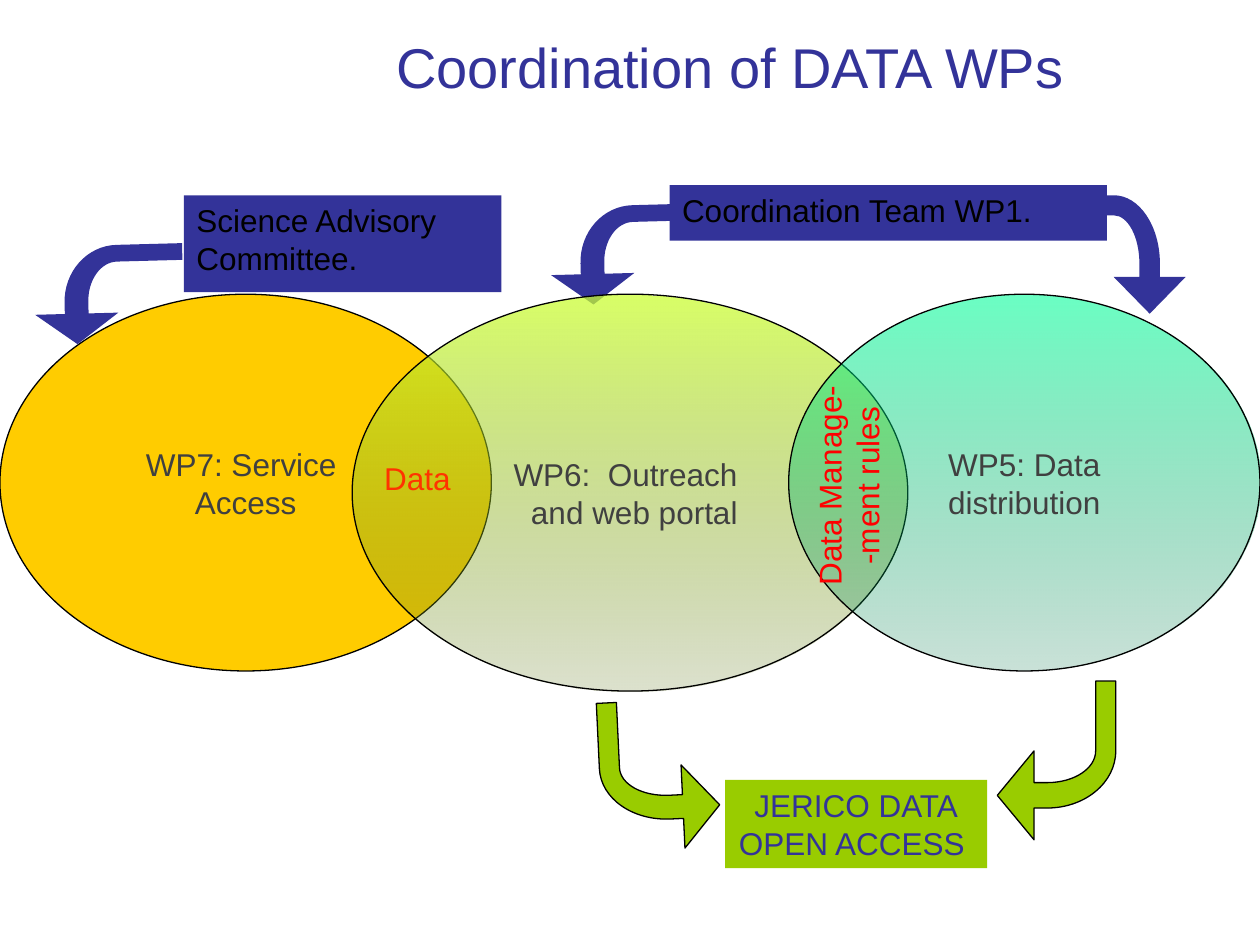
"""Build the slide on the coordination of the data work packages."""
import pptx
import pptx.dml.color
import pptx.enum.shapes
import pptx.enum.text
import pptx.oxml
import pptx.oxml.ns
import pptx.util

RGB = pptx.dml.color.RGBColor
SHAPE = pptx.enum.shapes.MSO_SHAPE
ALIGN = pptx.enum.text.PP_ALIGN
ANCHOR = pptx.enum.text.MSO_ANCHOR
AUTO = pptx.enum.text.MSO_AUTO_SIZE

NAVY = RGB(0x33, 0x33, 0x99)
GREEN = RGB(0x99, 0xCC, 0x00)
AMBER = RGB(0xFF, 0xCC, 0x00)
LIME = RGB(0xCC, 0xFF, 0x33)
OLIVE = RGB(0x5E, 0x76, 0x18)
MINT = RGB(0x00, 0xFF, 0x99)
TEAL = RGB(0x00, 0x76, 0x47)
ORANGE = RGB(0xFF, 0x33, 0x00)
RED = RGB(0xFF, 0x00, 0x00)
GREY = RGB(0x40, 0x40, 0x40)
BLACK = RGB(0x00, 0x00, 0x00)

COLS, ROWS = 100, 75
CELL = pptx.util.Inches(0.1)

ARROW = [(1, 0.28), (0.69, 0), (0.69, 0.2), (0.58, 0.2),
         (0.26, 0.2), (0, 0.36), (0, 0.56),
         (0, 1), (0.17, 1), (0.17, 0.56),
         (0.17, 0.45), (0.35, 0.36), (0.58, 0.36),
         (0.69, 0.36), (0.69, 0.56)]
ARROW_BENDS = (3, 9)


def grid(*cells):
    """Turn grid columns and rows into lengths."""
    return [pptx.util.Emu(round(c * CELL)) for c in cells]


def write(tf, lines, color, align=ALIGN.LEFT, size=18):
    """Write one paragraph for each line."""
    for i, line in enumerate(lines):
        p = tf.add_paragraph() if i else tf.paragraphs[0]
        p.alignment = align
        r = p.add_run()
        r.text = line
        r.font.name = "Arial"
        r.font.size = pptx.util.Pt(size)
        r.font.color.rgb = color


def paint(sp, fill, outlined):
    """Give a shape a plain fill and a thin black outline or none."""
    sp.shadow.inherit = False
    sp.fill.solid()
    sp.fill.fore_color.rgb = fill
    if outlined:
        sp.line.color.rgb = BLACK
        sp.line.width = pptx.util.Pt(0.75)
    else:
        sp.line.fill.background()


def fade(sp, stops):
    """Give a shape a downward gradient of (colour, opacity) stops."""
    sp.fill.gradient()
    sp.fill.gradient_angle = 270
    for stop, (color, _) in zip(sp.fill.gradient_stops, stops):
        stop.color.rgb = color
    tags = sp._element.spPr.iter(pptx.oxml.ns.qn("a:srgbClr"))
    for (_, opacity), clr in zip(stops, tags):
        alpha = pptx.oxml.parse_xml(
            f'<a:alpha {pptx.oxml.ns.nsdecls("a")} val="{opacity * 1000}"/>')
        clr.append(alpha)


def add_title(s, box, text):
    """Fill and place the title placeholder."""
    sp = s.shapes.title
    sp.left, sp.top, sp.width, sp.height = grid(*box)
    tf = sp.text_frame
    tf.auto_size = AUTO.NONE
    tf.vertical_anchor = ANCHOR.TOP
    write(tf, [text], NAVY, ALIGN.CENTER, 32)


def add_ellipse(s, box, lines, fill, stops=None):
    """Add a work package ellipse."""
    sp = s.shapes.add_shape(SHAPE.OVAL, *grid(*box))
    paint(sp, fill, True)
    if stops:
        fade(sp, stops)
    tf = sp.text_frame
    tf.word_wrap = False
    tf.vertical_anchor = ANCHOR.MIDDLE
    write(tf, lines, GREY, ALIGN.CENTER)


def add_label(s, box, lines, color, align=ALIGN.LEFT, rotation=0):
    """Add a text box over an overlap of ellipses."""
    sp = s.shapes.add_textbox(*grid(*box))
    sp.rotation = rotation
    tf = sp.text_frame
    tf.word_wrap = False
    tf.auto_size = AUTO.SHAPE_TO_FIT_TEXT
    write(tf, lines, color, align)


def add_box(s, box, lines, fill, color, align=ALIGN.LEFT):
    """Add a filled rectangle with text at its top."""
    sp = s.shapes.add_shape(SHAPE.RECTANGLE, *grid(*box))
    paint(sp, fill, False)
    tf = sp.text_frame
    tf.word_wrap = align == ALIGN.LEFT
    tf.auto_size = AUTO.SHAPE_TO_FIT_TEXT
    tf.vertical_anchor = ANCHOR.TOP
    write(tf, lines, color, align)


def curve(sp, starts):
    """Turn each three line segments from a start into one Bezier curve."""
    lines = list(sp._element.spPr.iter(pptx.oxml.ns.qn("a:lnTo")))
    for start in starts:
        bezier = pptx.oxml.parse_xml(
            f'<a:cubicBezTo {pptx.oxml.ns.nsdecls("a")}/>')
        lines[start].addprevious(bezier)
        for line in lines[start:start + 3]:
            bezier.append(line[0])
            line.getparent().remove(line)


def add_bent_arrow(s, box, rotation, fill, mirrored=False, outlined=False):
    """Add a curved arrow that rises from its tail and turns to its tip."""
    left, top, width, height = grid(*box)
    points = [(round(left + width * (1 - u if mirrored else u)),
               round(top + height * v)) for u, v in ARROW]
    fb = s.shapes.build_freeform(*points[0])
    fb.add_line_segments(points[1:], close=True)
    sp = fb.convert_to_shape()
    curve(sp, ARROW_BENDS)
    sp.rotation = rotation
    paint(sp, fill, outlined)


def main():
    """Build and save the slide."""
    prs = pptx.Presentation()
    prs.slide_width, prs.slide_height = grid(COLS, ROWS)
    s = prs.slides.add_slide(prs.slide_layouts[5])

    add_bent_arrow(s, (45.7, 14.3, 7.8, 11.8), 268.5, NAVY, mirrored=True)
    add_bent_arrow(s, (84.3, 15.1, 9.4, 10.2), 90, NAVY)
    add_title(s, (20.9, 2.1, 74.1, 8.5), "Coordination of DATA WPs")

    add_ellipse(s, (0, 23.35, 39, 29.9), ["WP7: Service ", "Access"], AMBER)
    add_ellipse(s, (27.95, 23.35, 44.1, 31.5),
                ["WP6:  Outreach ", " and web portal"],
                LIME, [(LIME, 75), (OLIVE, 21)])
    add_ellipse(s, (62.6, 23.35, 37.4, 29.9), [" WP5: Data ", "distribution"],
                MINT, [(MINT, 59), (TEAL, 21)])

    add_label(s, (29.5, 35.9, 7.3, 4), ["Data"], ORANGE)
    add_label(s, (57.6, 34.7, 20.1, 7.7), ["Data Manage-", "-ment rules"],
              RED, ALIGN.CENTER, 270)

    add_box(s, (57.55, 61.9, 20.8, 7), ["JERICO DATA", "OPEN ACCESS "],
            GREEN, NAVY, ALIGN.CENTER)
    add_bent_arrow(s, (79.15, 54.05, 9.4, 12.6), 180, GREEN, outlined=True)
    add_bent_arrow(s, (47.6, 55.6, 9.4, 11.8), 177.3, GREEN,
                   mirrored=True, outlined=True)

    add_box(s, (53.15, 14.7, 34.7, 4.4), ["Coordination Team WP1."],
            NAVY, BLACK)
    add_box(s, (14.6, 15.5, 25.2, 7.7), ["Science Advisory", "Committee."],
            NAVY, BLACK)
    add_bent_arrow(s, (4.75, 17.45, 7.8, 11.8), 268.5, NAVY, mirrored=True)

    prs.save("out.pptx")


if __name__ == "__main__":
    main()
